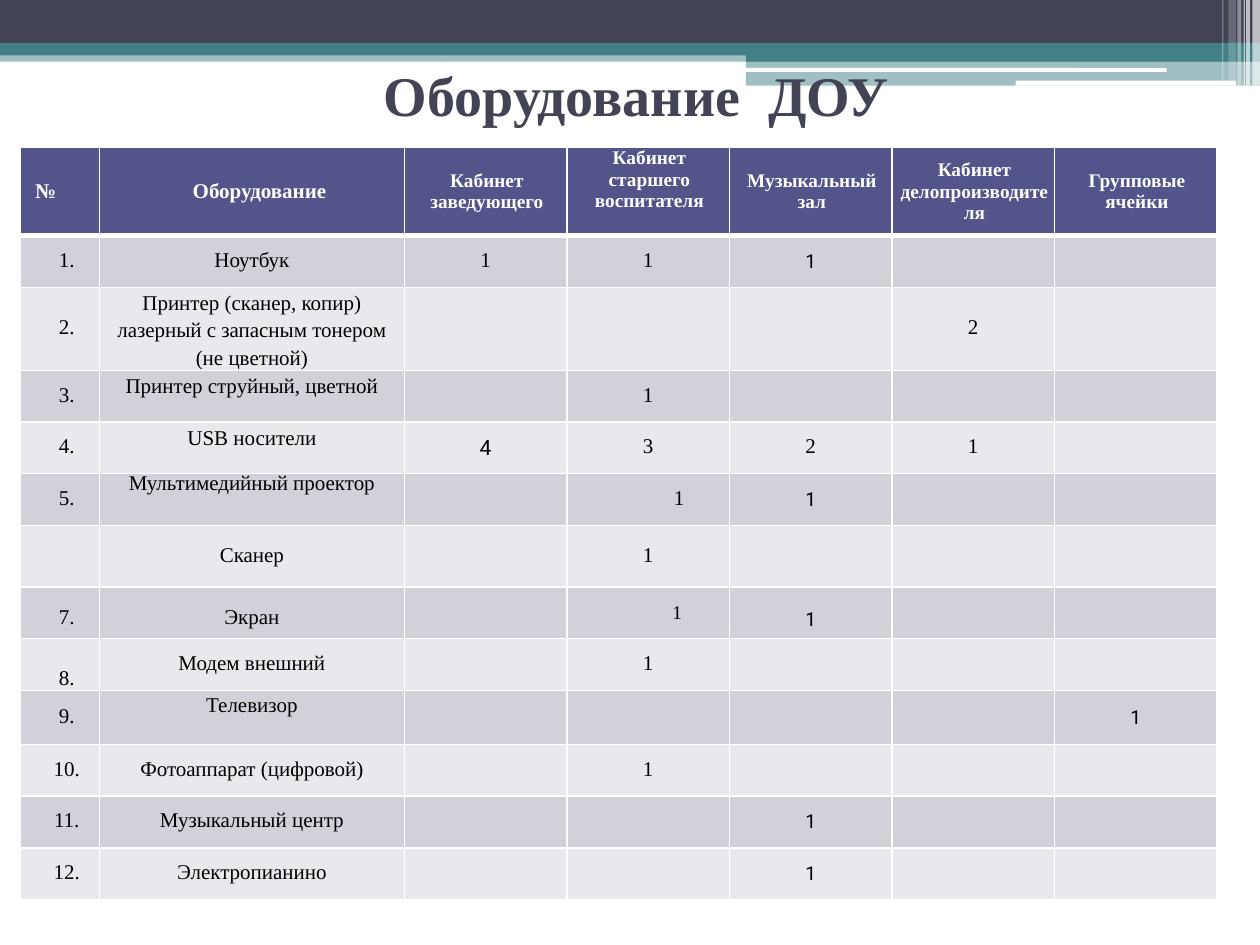
from lxml.etree import SubElement
from pptx import Presentation
from pptx.dml.color import RGBColor
from pptx.enum.shapes import MSO_SHAPE
from pptx.enum.text import MSO_ANCHOR, PP_ALIGN
from pptx.oxml.ns import qn
from pptx.util import Inches, Pt

COLORS = {
    "dark": "424456", "teal": "438086", "white": "FFFFFF", "black": "000000",
    "header": "53548A", "odd": "D1D1DA", "even": "E9E9ED",
}
SERIF, SANS = "Times New Roman", "Roboto"
TOP, MIDDLE, BOTTOM = MSO_ANCHOR.TOP, MSO_ANCHOR.MIDDLE, MSO_ANCHOR.BOTTOM

TITLE = "Оборудование  ДОУ"

# left, top, width, height, colour, opacity in percent
BANDS = [
    (0, 0.4, 10, 0.09, "teal", 50),
    (0, 0, 10, 0.34, "dark", 100),
    (0, 0.34, 10, 0.1, "teal", 100),
    (5.92, 0.39, 4.08, 0.1, "teal", 100),
    (5.92, 0.48, 4.08, 0.2, "teal", 50),
]
ROUNDED_BARS = [
    (5.91, 0.54, 3.35, 0.03, "white", 100),
    (8.06, 0.64, 1.75, 0.04, "white", 100),
]
STRIPES = [
    (9.94, 0, 0.06, 0.68, "white", 65),
    (9.89, 0, 0.03, 0.68, "white", 65),
    (9.87, 0, 0.01, 0.68, "white", 60),
    (9.82, 0, 0.03, 0.68, "white", 40),
    (9.75, 0, 0.06, 0.64, "white", 20),
    (9.7, 0, 0.01, 0.64, "white", 30),
]

COLUMN_WIDTHS = [0.63, 2.42] + [1.29] * 5
HEADER_HEIGHT = 0.7
HEADERS = [
    ("№", {"size": 12, "align": PP_ALIGN.LEFT, "indent": 0.11}),
    ("Оборудование", {"size": 12, "indent": 0.12}),
    ("Кабинет\nзаведующего", {"line": 12}),
    ("Кабинет\nстаршего\nвоспитателя", {"anchor": TOP}),
    ("Музыкальный зал", {}),
    ("Кабинет\nделопроизводителя", {}),
    ("Групповые\nячейки", {}),
]

# row height, number, equipment, {column: count}
ROWS = [
    (0.41, "1.", "Ноутбук", {2: "1", 3: "1", 4: "1"}),
    (0.66, "2.", "Принтер (сканер, копир) лазерный с запасным тонером\n(не цветной)", {5: "2"}),
    (0.41, "3.", "Принтер струйный, цветной", {3: "1"}),
    (0.41, "4.", "USB носители", {2: "4", 3: "3", 4: "2", 5: "1"}),
    (0.41, "5.", "Мультимедийный проектор", {3: "1", 4: "1"}),
    (0.49, "", "Сканер", {3: "1"}),
    (0.41, "7.", "Экран", {3: "1", 4: "1"}),
    (0.41, "8.", "Модем внешний", {3: "1"}),
    (0.43, "9.", "Телевизор", {6: "1"}),
    (0.41, "10.", "Фотоаппарат (цифровой)", {3: "1"}),
    (0.41, "11.", "Музыкальный центр", {4: "1"}),
    (0.41, "12.", "Электропианино", {4: "1"}),
]

SANS_COUNT = {"font": SANS, "size": 11, "line": None}
LOWERED = {"anchor": TOP, "top": 0.17}
# (row, column): departures from the usual cell format
SPECIAL = {
    (1, 4): SANS_COUNT,
    (2, 1): {"anchor": TOP, "line": 15.8},
    (3, 1): {"anchor": TOP, "line": 16.1},
    (4, 1): {"anchor": TOP, "line": 15.8},
    (4, 2): SANS_COUNT | {"size": 12},
    (5, 1): {"anchor": TOP},
    (5, 3): {"indent": 0.49},
    (5, 4): SANS_COUNT,
    (7, 0): LOWERED,
    (7, 1): LOWERED,
    (7, 3): {"indent": 0.46, "size": 11},
    (7, 4): SANS_COUNT | LOWERED,
    (8, 0): {"anchor": BOTTOM},
    (9, 1): {"anchor": TOP, "line": 15.6},
    (9, 6): SANS_COUNT,
    (11, 4): SANS_COUNT,
    (12, 4): SANS_COUNT,
}


def rgb(name):
    return RGBColor.from_string(COLORS[name])


def write(frame, text, size=12, font=SERIF, color="black", bold=False,
          align=PP_ALIGN.CENTER, line=None, indent=0):
    frame.text = ""
    para = frame.paragraphs[0]
    para.text = text.replace("\n", "\v")
    para.alignment = align
    if line:
        para.line_spacing = Pt(line)
    if indent:
        para._p.get_or_add_pPr().set("marL", str(Inches(indent)))
    for span in para.runs:
        span.font.size = Pt(size)
        span.font.name = font
        span.font.bold = bold
        span.font.color.rgb = rgb(color)


def add_bar(page, kind, left, top, width, height, color, opacity):
    bar = page.shapes.add_shape(kind, *map(Inches, (left, top, width, height)))
    bar.shadow.inherit = False
    bar.line.fill.background()
    bar.fill.solid()
    bar.fill.fore_color.rgb = rgb(color)
    if opacity < 100:
        tint = bar._element.spPr.find(".//" + qn("a:srgbClr"))
        SubElement(tint, qn("a:alpha")).set("val", str(opacity * 1000))


def add_borders(cell, bottom):
    """Draw white cell edges; they must precede the fill in the cell's XML."""
    properties = cell._tc.get_or_add_tcPr()
    for edge, width in (("L", 1), ("R", 1), ("T", 1), ("B", bottom)):
        line = SubElement(properties, qn("a:ln" + edge), w=str(Pt(width)))
        fill = SubElement(line, qn("a:solidFill"))
        SubElement(fill, qn("a:srgbClr"), val=COLORS["white"])


def fill_cell(cell, text, fill, bottom=1, anchor=MIDDLE, top=0, **text_format):
    add_borders(cell, bottom)
    cell.fill.solid()
    cell.fill.fore_color.rgb = rgb(fill)
    cell.margin_left = cell.margin_right = Inches(0.01)
    cell.margin_top, cell.margin_bottom = Inches(top), 0
    cell.vertical_anchor = anchor
    write(cell.text_frame, text, **text_format)


def add_equipment_table(page):
    heights = [HEADER_HEIGHT] + [row[0] for row in ROWS]
    table = page.shapes.add_table(
        len(heights), len(COLUMN_WIDTHS), Inches(0.16), Inches(1.17),
        Inches(sum(COLUMN_WIDTHS)), Inches(sum(heights))).table
    for column, width in zip(table.columns, COLUMN_WIDTHS):
        column.width = Inches(width)
    for row, height in zip(table.rows, heights):
        row.height = Inches(height)

    for c, (text, changes) in enumerate(HEADERS):
        style = {"size": 11, "color": "white", "bold": True, "indent": 0.02}
        fill_cell(table.cell(0, c), text, "header", bottom=3, **(style | changes))
    for r, (_, number, name, counts) in enumerate(ROWS, 1):
        texts = {0: number, 1: name} | counts
        for c in range(len(COLUMN_WIDTHS)):
            style = {"line": 12, "indent": 0.11 if c == 0 else 0}
            fill_cell(table.cell(r, c), texts.get(c, ""), "odd" if r % 2 else "even",
                      **(style | SPECIAL.get((r, c), {})))


def main():
    deck = Presentation()
    deck.slide_width, deck.slide_height = Inches(10), Inches(7.5)
    page = deck.slides.add_slide(deck.slide_layouts[5])
    for kind, bars in ((MSO_SHAPE.RECTANGLE, BANDS),
                       (MSO_SHAPE.ROUNDED_RECTANGLE, ROUNDED_BARS),
                       (MSO_SHAPE.RECTANGLE, STRIPES)):
        for bar in bars:
            add_bar(page, kind, *bar)

    title = page.shapes.title
    title.left, title.top, title.width, title.height = map(Inches, (0.55, 0.55, 9, 0.39))
    title.text_frame.vertical_anchor = MIDDLE
    write(title.text_frame, TITLE, size=32, color="dark", bold=True)
    page.shapes._spTree.append(title._element)  # in front of the bands

    add_equipment_table(page)
    deck.save("out.pptx")


if __name__ == "__main__":
    main()
